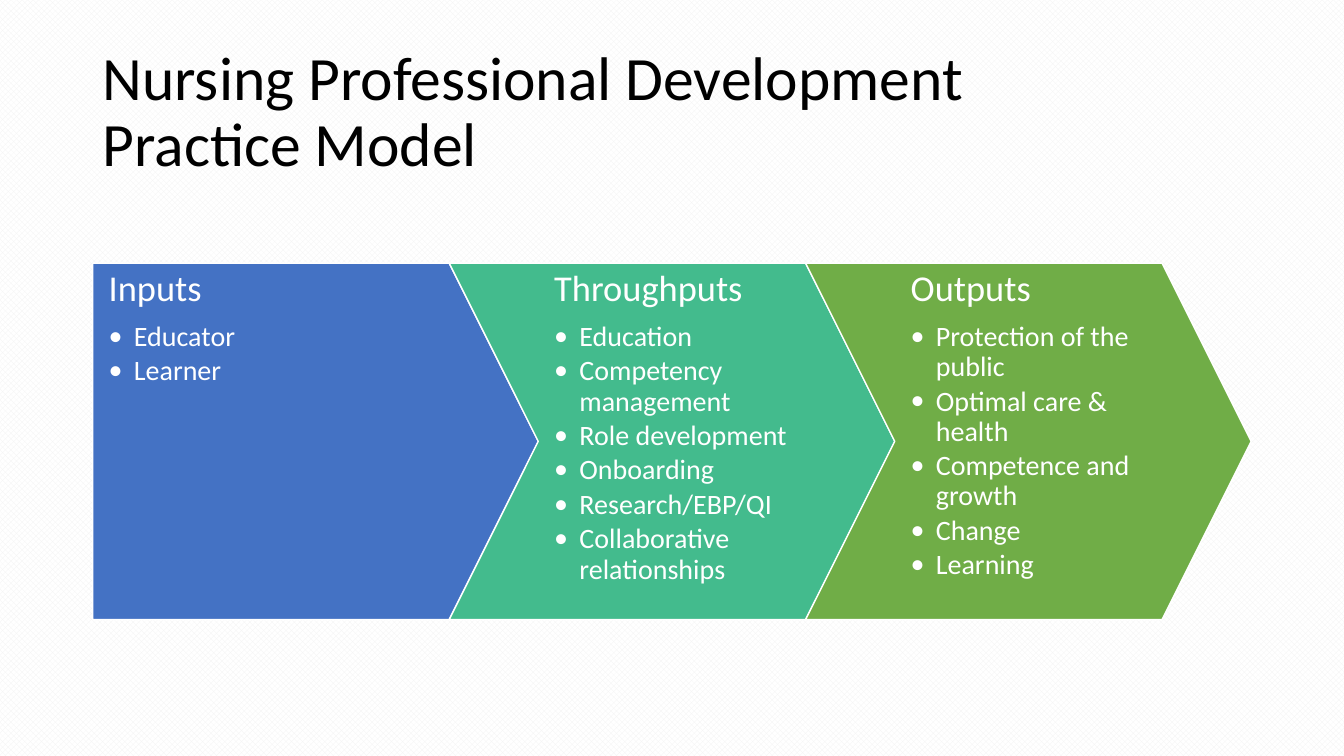
"""Build the Nursing Professional Development Practice Model slide."""
from lxml.etree import SubElement
from pptx import Presentation
from pptx.dml.color import RGBColor
from pptx.enum.dml import MSO_PATTERN
from pptx.enum.shapes import MSO_SHAPE
from pptx.enum.text import MSO_ANCHOR, MSO_AUTO_SIZE, PP_ALIGN
from pptx.oxml.ns import qn
from pptx.util import Pt

COLORS = {
    "text": "000000",
    "white": "FFFFFF",
    "check": "F2F2F2",
    "inputs": "4472C4",
    "throughputs": "43BB8D",
    "outputs": "70AD47",
}
STAGES = [
    ("Inputs", MSO_SHAPE.PENTAGON, "inputs", 44.8, ["Educator", "Learner"]),
    ("Throughputs", MSO_SHAPE.CHEVRON, "throughputs", 11.4,
     ["Education", "Competency management", "Role development", "Onboarding",
      "Research/EBP/QI", "Collaborative relationships"]),
    ("Outputs", MSO_SHAPE.CHEVRON, "outputs", 11.4,
     ["Protection of the public", "Optimal care & health",
      "Competence and growth", "Change", "Learning"]),
]
LEFT, TOP, HEIGHT = 66.25, 188, 254.6
POINT_RATIO = 0.25
WIDTH = HEIGHT * (1 + POINT_RATIO)
BULLET_INDENT = Pt(18)


def color(name):
    return RGBColor.from_string(COLORS[name])


def format_paragraph(para, size, color_name, gap_ratio):
    values = {"alignment": PP_ALIGN.LEFT, "line_spacing": 0.9,
              "space_before": Pt(0), "space_after": Pt(size * gap_ratio)}
    for name, value in values.items():
        setattr(para, name, value)
    for span in para.runs:
        for name, value in {"name": "Calibri", "size": Pt(size)}.items():
            setattr(span.font, name, value)
        span.font.color.rgb = color(color_name)


deck = Presentation()
deck.slide_width, deck.slide_height = Pt(960), Pt(540)
page = deck.slides.add_slide(deck.slide_layouts[5])

background = page.background.fill
background.patterned()
background.pattern = MSO_PATTERN.LARGE_CHECKER_BOARD
background.fore_color.rgb = color("check")
background.back_color.rgb = color("white")

title = page.shapes.title
title_place = {"left": 66, "top": 28.75, "width": 828, "height": 104.4}
for name, value in title_place.items():
    setattr(title, name, Pt(value))
title.text_frame.text = "Nursing Professional Development\vPractice Model"
title_format = {"vertical_anchor": MSO_ANCHOR.MIDDLE, "word_wrap": True,
                "auto_size": MSO_AUTO_SIZE.NONE}
for name, value in title_format.items():
    setattr(title.text_frame, name, value)
format_paragraph(title.text_frame.paragraphs[0], 44, "text", 0)

for index, (heading, kind, fill_name, right_margin, items) in enumerate(STAGES):
    arrow = page.shapes.add_shape(
        kind, Pt(LEFT + index * HEIGHT), Pt(TOP), Pt(WIDTH), Pt(HEIGHT))
    arrow.adjustments[0] = POINT_RATIO
    arrow.shadow.inherit = False
    arrow.fill.solid()
    arrow.fill.fore_color.rgb = color(fill_name)
    arrow.line.color.rgb = color("white")
    arrow.line.width = Pt(1)

    frame = arrow.text_frame
    frame_format = {"word_wrap": True, "vertical_anchor": MSO_ANCHOR.TOP,
                    "margin_left": Pt(11.4), "margin_right": Pt(right_margin),
                    "margin_top": Pt(5), "margin_bottom": Pt(5)}
    for name, value in frame_format.items():
        setattr(frame, name, value)
    frame.text = heading
    format_paragraph(frame.paragraphs[0], 26, "white", 0.35)

    for item in items:
        para = frame.add_paragraph()
        para.text = item
        para.level = 1
        format_paragraph(para, 20, "white", 0.15)
        properties = para._p.get_or_add_pPr()
        properties.set("marL", str(BULLET_INDENT))
        properties.set("indent", str(-BULLET_INDENT))
        SubElement(properties, qn("a:buFont"), typeface="Calibri")
        SubElement(properties, qn("a:buChar"), char="•")

deck.save("out.pptx")
